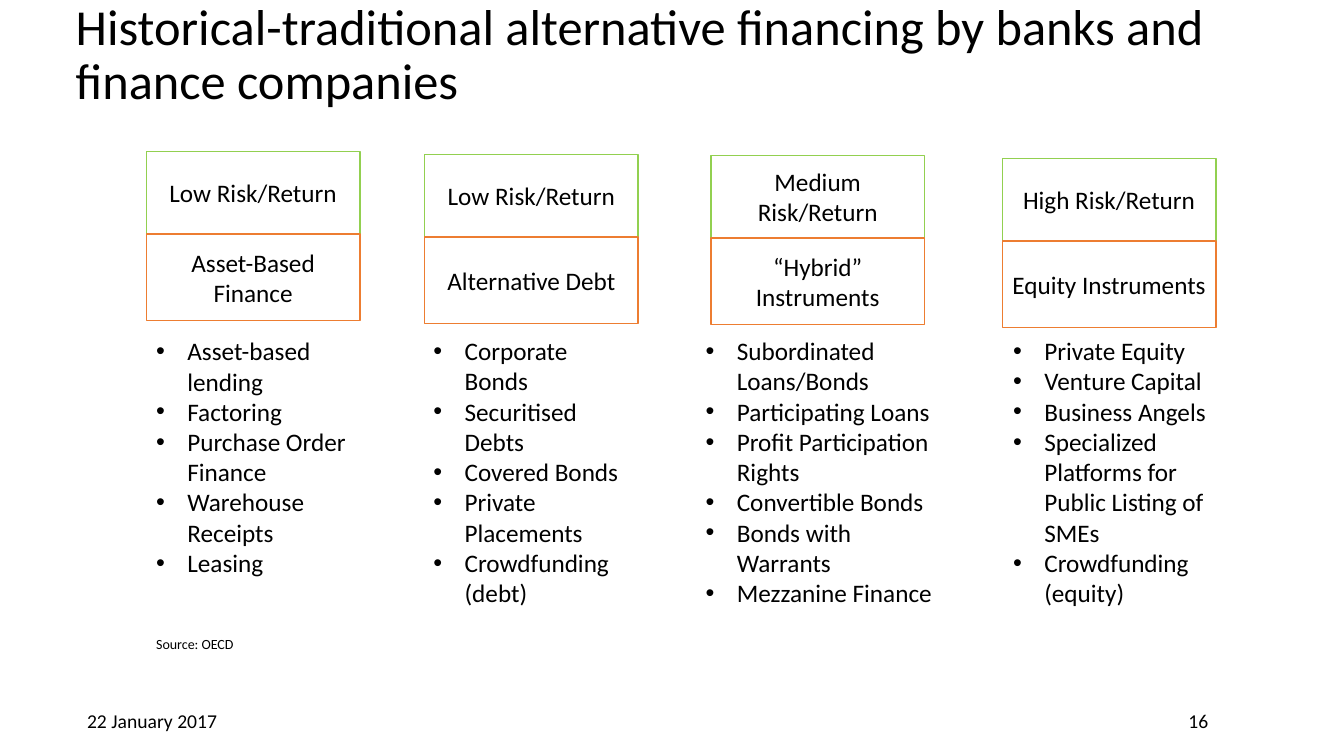
from lxml.etree import SubElement
from pptx import Presentation
from pptx.dml.color import RGBColor
from pptx.enum.shapes import MSO_SHAPE as Shape
from pptx.enum.text import MSO_ANCHOR as Anchor, MSO_AUTO_SIZE as AutoSize, PP_ALIGN as Align
from pptx.oxml.ns import qn
from pptx.util import Inches, Pt

BLACK = RGBColor(0x00, 0x00, 0x00)
WHITE = RGBColor(0xFF, 0xFF, 0xFF)
GREEN = RGBColor(0x92, 0xD0, 0x50)
ORANGE = RGBColor(0xED, 0x7D, 0x31)

BOX_WIDTH, RISK_HEIGHT, TYPE_HEIGHT = 2.12, 0.82, 0.86
LIST_TOP = 3.28

# Each column: box left, box top, risk level, financing type,
# list left, list width, list height, instruments
COLUMNS = [
    (1.45, 1.5, "Low Risk/Return", "Asset-Based Finance", 1.45, 2.12, 2.52,
     ["Asset-based lending", "Factoring", "Purchase Order Finance",
      "Warehouse Receipts", "Leasing"]),
    (4.21, 1.53, "Low Risk/Return", "Alternative Debt", 4.2, 2.12, 2.83,
     ["Corporate Bonds", "Securitised Debts", "Covered Bonds",
      "Private Placements", "Crowdfunding (debt)"]),
    (7.05, 1.54, "Medium Risk/Return", "“Hybrid” Instruments", 6.9, 2.47, 2.83,
     ["Subordinated Loans/Bonds", "Participating Loans",
      "Profit Participation Rights", "Convertible Bonds",
      "Bonds with Warrants", "Mezzanine Finance"]),
    (9.94, 1.57, "High Risk/Return", "Equity Instruments", 9.95, 2.24, 2.83,
     ["Private Equity", "Venture Capital", "Business Angels",
      "Specialized Platforms for Public Listing of SMEs",
      "Crowdfunding (equity)"]),
]


class FinancingSlide:
    font_name = "Calibri"
    body_size = 18

    def __init__(self, slide):
        self.slide = slide

    def add_text(self, paragraph, text, size, align=Align.LEFT):
        paragraph.alignment = align
        run = paragraph.add_run()
        run.text = text
        run.font.name = self.font_name
        run.font.size = Pt(size)
        run.font.color.rgb = BLACK

    def title(self, text, left, top, width, height):
        heading = self.slide.shapes.title
        heading.left, heading.top = Inches(left), Inches(top)
        heading.width, heading.height = Inches(width), Inches(height)
        frame = heading.text_frame
        frame.auto_size = AutoSize.NONE
        frame.vertical_anchor = Anchor.MIDDLE
        frame.paragraphs[0].line_spacing = 0.9
        self.add_text(frame.paragraphs[0], text, 36)

    def text_frame(self, left, top, width, height, anchor=Anchor.TOP):
        area = self.slide.shapes.add_textbox(
            Inches(left), Inches(top), Inches(width), Inches(height))
        frame = area.text_frame
        frame.word_wrap = True
        frame.vertical_anchor = anchor
        return frame

    def label(self, text, left, top, width, height, size, align=Align.LEFT):
        frame = self.text_frame(left, top, width, height, Anchor.MIDDLE)
        self.add_text(frame.paragraphs[0], text, size, align)

    def box(self, text, left, top, height, outline):
        panel = self.slide.shapes.add_shape(
            Shape.RECTANGLE, Inches(left), Inches(top),
            Inches(BOX_WIDTH), Inches(height))
        panel.shadow.inherit = False
        panel.fill.solid()
        panel.fill.fore_color.rgb = WHITE
        panel.line.color.rgb = outline
        panel.line.width = Pt(1)
        frame = panel.text_frame
        frame.word_wrap = True
        frame.vertical_anchor = Anchor.MIDDLE
        frame.margin_left = frame.margin_right = Inches(0.08)
        self.add_text(frame.paragraphs[0], text, self.body_size, Align.CENTER)

    def bullets(self, items, left, top, width, height):
        frame = self.text_frame(left, top, width, height)
        frame.auto_size = AutoSize.SHAPE_TO_FIT_TEXT
        for index, item in enumerate(items):
            paragraph = frame.add_paragraph() if index else frame.paragraphs[0]
            properties = paragraph._p.get_or_add_pPr()
            properties.set("marL", str(Inches(0.31)))
            properties.set("indent", str(Inches(-0.31)))
            SubElement(properties, qn("a:buFont"), typeface="Arial")
            SubElement(properties, qn("a:buChar"), char="•")
            self.add_text(paragraph, item, self.body_size)


def main():
    deck = Presentation()
    deck.slide_width, deck.slide_height = Inches(13.33), Inches(7.5)
    title_only = deck.slide_layouts[5]
    page = FinancingSlide(deck.slides.add_slide(title_only))

    # Title
    page.title("Historical-traditional alternative financing by banks and "
               "finance companies", 0.65, 0.02, 12.1, 1.08)

    # Financing columns
    for left, top, risk, kind, list_left, list_width, list_height, instruments in COLUMNS:
        page.box(risk, left, top, RISK_HEIGHT, GREEN)
        page.box(kind, left, top + RISK_HEIGHT, TYPE_HEIGHT, ORANGE)
        page.bullets(instruments, list_left, LIST_TOP, list_width, list_height)

    # Source and footer
    page.label("Source: OECD", 1.45, 6.25, 1.55, 0.27, 10)
    page.label("22 January 2017", 0.01, 6.95, 3, 0.4, 14, Align.CENTER)
    page.label("16", 10.45, 6.95, 2.87, 0.4, 14, Align.CENTER)

    deck.save("out.pptx")


if __name__ == "__main__":
    main()
